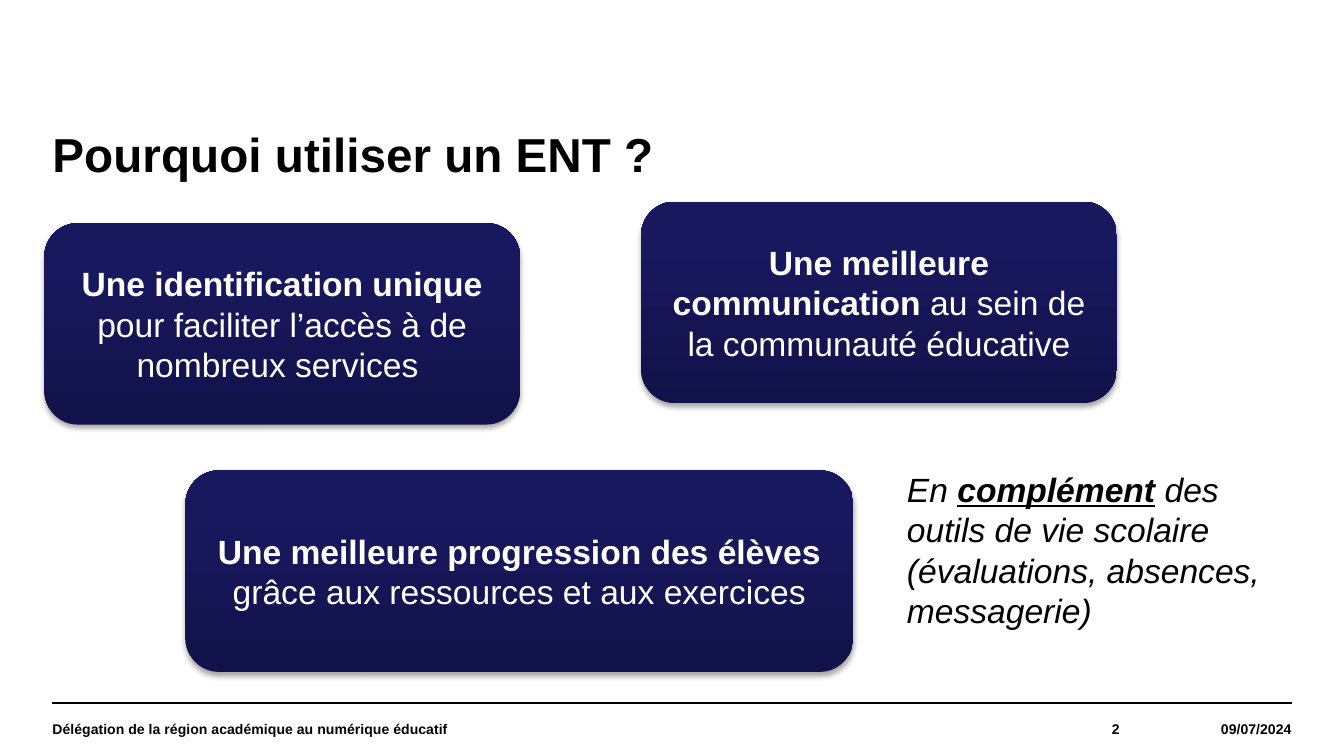
"""Build the slide on the reasons for using an ENT."""
from lxml import etree
from pptx import Presentation
from pptx.dml.color import RGBColor
from pptx.enum.shapes import MSO_CONNECTOR, MSO_SHAPE
from pptx.enum.text import MSO_ANCHOR, PP_ALIGN
from pptx.oxml import parse_xml
from pptx.oxml.ns import nsdecls, qn
from pptx.util import Inches, Pt

LEFT, CENTER, RIGHT = PP_ALIGN.LEFT, PP_ALIGN.CENTER, PP_ALIGN.RIGHT
TOP, MIDDLE = MSO_ANCHOR.TOP, MSO_ANCHOR.MIDDLE
ROUNDED = MSO_SHAPE.ROUNDED_RECTANGLE
STRAIGHT = MSO_CONNECTOR.STRAIGHT
COLORS = {"ink": "000000", "paper": "FFFFFF", "deep": "12124A", "navy": "18185F", "top": "161661"}
GRADIENT = [(0, "deep"), (80, "navy"), (100, "top")]


def write_runs(frame, runs, size, color, align=LEFT, anchor=MIDDLE, italic=False):
    frame.word_wrap = True
    frame.vertical_anchor = anchor
    paragraph = frame.paragraphs[0]
    paragraph.alignment = align
    for text, bold, underline in runs:
        run = paragraph.add_run()
        run.text = text
        run.font.name = "Arial"
        run.font.size = Pt(size)
        run.font.bold = bold
        run.font.italic = italic
        run.font.underline = underline
        run.font.color.rgb = RGBColor.from_string(COLORS[color])
    return paragraph


def add_label(left, top, width, height, text, size, align=LEFT, anchor=MIDDLE):
    box = slide.shapes.add_textbox(Inches(left), Inches(top), Inches(width), Inches(height))
    frame = box.text_frame
    frame.margin_left = frame.margin_right = frame.margin_top = frame.margin_bottom = 0
    return write_runs(frame, [(text, True, False)], size, "ink", align, anchor)


prs = Presentation()
prs.slide_width = Inches(10)
prs.slide_height = Inches(10 * 9 / 16)
slide = prs.slides.add_slide(prs.slide_layouts[6])

footer_rule = slide.shapes.add_connector(STRAIGHT, Inches(0.39), Inches(5.23), Inches(9.61), Inches(5.23))
footer_rule.line.color.rgb = RGBColor.from_string(COLORS["ink"])
footer_rule.line.width = Pt(0.8)
etree.SubElement(footer_rule._element.spPr, qn("a:effectLst"))

add_label(8.33, 5.23, 1.28, 0.39, "09/07/2024", 7.5, RIGHT)
add_label(6.85, 5.23, 1.48, 0.39, "2", 7.5, RIGHT)
add_label(0.39, 5.3, 3.54, 0.25, "Délégation de la région académique au numérique éducatif", 7.5)
title = add_label(0.39, 0.98, 9.21, 0.79, "Pourquoi utiliser un ENT ?", 25.5, anchor=TOP)
title.line_spacing = 0.9

benefits = [
    (0.33, 1.66, 3.54, "Une identification unique ", "pour faciliter l’accès à de nombreux services "),
    (4.77, 1.5, 3.54, "Une meilleure communication ", "au sein de la communauté éducative"),
    (1.38, 3.5, 4.97, "Une meilleure progression des élèves ", "grâce aux ressources et aux exercices"),
]
for left, top, width, benefit, detail in benefits:
    card = slide.shapes.add_shape(ROUNDED, Inches(left), Inches(top), Inches(width), Inches(1.5))
    card.adjustments[0] = 0.167
    card.line.fill.background()
    card.fill.gradient()
    card.fill.gradient_angle = 90
    stops = card._element.spPr.find(qn("a:gradFill")).find(qn("a:gsLst"))
    stops.clear()
    for position, tone in GRADIENT:
        stop = etree.SubElement(stops, qn("a:gs"), pos=str(position * 1000))
        etree.SubElement(stop, qn("a:srgbClr"), val=COLORS[tone])
    card.shadow.inherit = False
    card._element.spPr.find(qn("a:effectLst")).append(parse_xml(
        f'<a:outerShdw {nsdecls("a")} blurRad="{Pt(3.1)}" dist="{Pt(1.8)}" dir="5400000" rotWithShape="0">'
        f'<a:srgbClr val="{COLORS["ink"]}"><a:alpha val="35000"/></a:srgbClr></a:outerShdw>'))
    write_runs(card.text_frame, [(benefit, True, False), (detail, False, False)], 18, "paper", CENTER)

note = slide.shapes.add_textbox(Inches(6.65), Inches(3.44), Inches(3.12), Inches(1.31))
note_runs = [
    ("En ", False, False),
    ("complément", True, True),
    (" des outils de vie scolaire (évaluations, absences, messagerie)", False, False),
]
write_runs(note.text_frame, note_runs, 18, "ink", anchor=TOP, italic=True)

prs.save("out.pptx")
